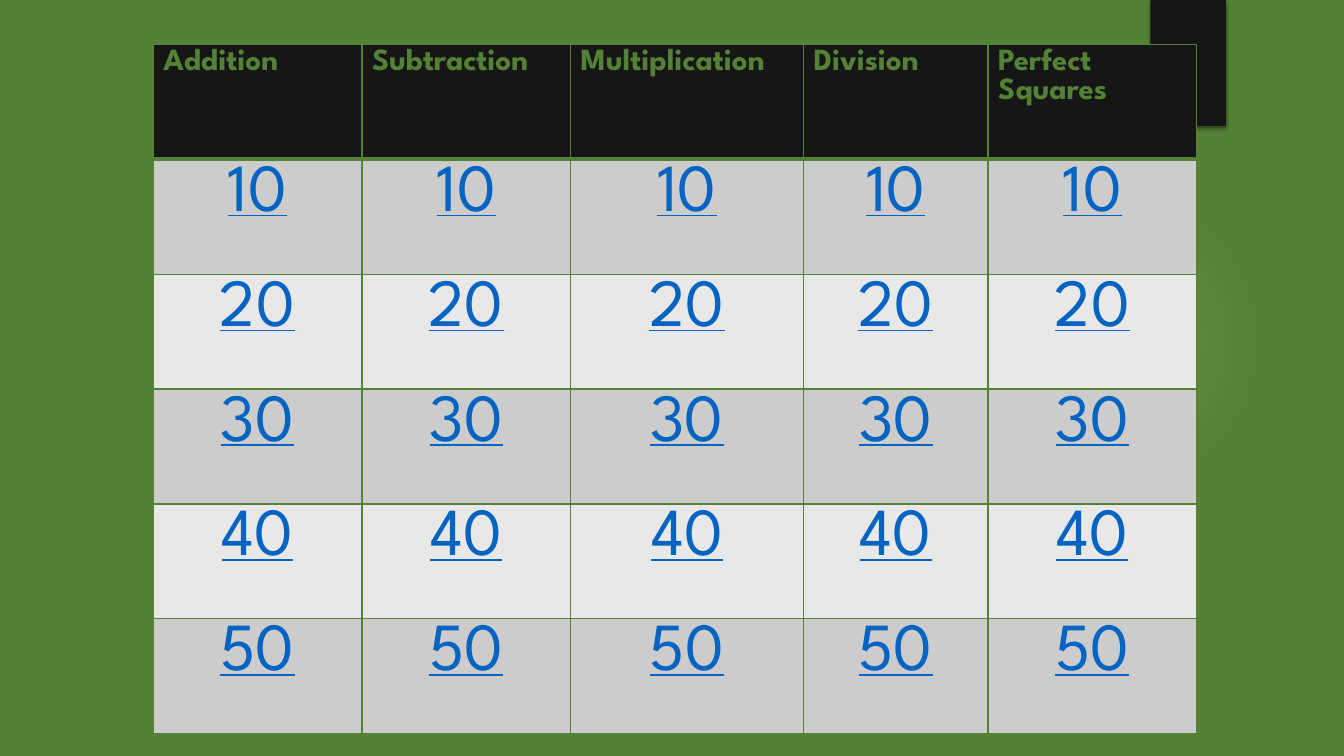
"""Build the arithmetic quiz board slide."""
from dataclasses import dataclass

from pptx import Presentation
from pptx.dml.color import RGBColor
from pptx.enum.shapes import MSO_SHAPE
from pptx.enum.text import PP_ALIGN
from pptx.oxml import parse_xml
from pptx.oxml.ns import nsdecls
from pptx.util import Inches, Pt


@dataclass(frozen=True)
class Theme:
    font: str = "League Spartan"
    green: str = "538135"
    dark: str = "171616"
    bands: tuple = ("CCCCCC", "E8E8E8")
    link: str = "0563C1"
    glow: str = "FFFFFF"
    shadow: str = "000000"
    heading_size: int = 22
    points_size: int = 48
    grid_width: int = 1
    header_rule: int = 3


TOPICS = ["Addition", "Subtraction", "Multiplication", "Division", "Perfect Squares"]
POINTS = [10, 20, 30, 40, 50]
COLUMN_WIDTHS = [2.07, 2.07, 2.31, 1.83, 2.07]
ROW_HEIGHT = 1.14


def write_text(frame, text, font, size, color, bold=False, underline=False,
               align=PP_ALIGN.LEFT):
    para = frame.paragraphs[0]
    para.alignment = align
    span = para.add_run()
    span.text = text
    span.font.name = font
    span.font.size = Pt(size)
    span.font.bold = bold
    span.font.underline = underline
    span.font.color.rgb = RGBColor.from_string(color)


class Board:
    def __init__(self, page, theme):
        self.page = page
        self.theme = theme

    def background(self):
        fill = self.page.background.fill
        fill.solid()
        fill.fore_color.rgb = RGBColor.from_string(self.theme.green)

    def shape(self, kind, left, top, width, height, color):
        box = self.page.shapes.add_shape(
            kind, Inches(left), Inches(top), Inches(width), Inches(height))
        box.shadow.inherit = False
        box.fill.solid()
        box.fill.fore_color.rgb = RGBColor.from_string(color)
        box.line.fill.background()
        return box

    def glow(self, left, top, size):
        box = self.shape(MSO_SHAPE.OVAL, left, top, size, size, self.theme.glow)
        stops = "".join(
            f'<a:gs pos="{place * 1000}"><a:srgbClr val="{self.theme.glow}">'
            f'<a:alpha val="{alpha * 1000}"/></a:srgbClr></a:gs>'
            for place, alpha in [(0, 7), (36, 6), (69, 0)])
        gradient = parse_xml(
            f'<a:gradFill {nsdecls("a")} rotWithShape="1"><a:gsLst>{stops}</a:gsLst>'
            '<a:path path="circle"><a:fillToRect l="50000" t="50000" r="50000" b="50000"/>'
            '</a:path></a:gradFill>')
        properties = box.element.spPr
        properties.replace(properties.find("{*}solidFill"), gradient)

    def tab(self, left, top, width, height):
        box = self.shape(MSO_SHAPE.RECTANGLE, left, top, width, height, self.theme.dark)
        box.element.spPr.find("{*}effectLst").append(parse_xml(
            f'<a:outerShdw {nsdecls("a")} blurRad="{Pt(3)}" dist="{Pt(2)}" dir="5400000">'
            f'<a:srgbClr val="{self.theme.shadow}"><a:alpha val="45000"/></a:srgbClr>'
            '</a:outerShdw>'))

    def cell(self, cell, color, top_rule, bottom_rule):
        grid = self.theme.grid_width
        rules = {"L": grid, "R": grid, "T": top_rule, "B": bottom_rule}
        for side, width in rules.items():
            cell._tc.get_or_add_tcPr().append(parse_xml(
                f'<a:ln{side} {nsdecls("a")} w="{Pt(width)}"><a:solidFill>'
                f'<a:srgbClr val="{self.theme.green}"/></a:solidFill></a:ln{side}>'))
        cell.fill.solid()
        cell.fill.fore_color.rgb = RGBColor.from_string(color)

    def table(self, left, top):
        theme = self.theme
        row_count = len(POINTS) + 1
        table = self.page.shapes.add_table(
            row_count, len(TOPICS), Inches(left), Inches(top),
            Inches(sum(COLUMN_WIDTHS)), Inches(ROW_HEIGHT * row_count)).table
        for column, width in zip(table.columns, COLUMN_WIDTHS):
            column.width = Inches(width)
        for row in table.rows:
            row.height = Inches(ROW_HEIGHT)
        for column, topic in enumerate(TOPICS):
            heading = table.cell(0, column)
            self.cell(heading, theme.dark, theme.grid_width, theme.header_rule)
            write_text(heading.text_frame, topic, theme.font, theme.heading_size,
                       theme.green, bold=True)
            for row, points in enumerate(POINTS, 1):
                cell = table.cell(row, column)
                top_rule = theme.header_rule if row == 1 else theme.grid_width
                self.cell(cell, theme.bands[(row - 1) % 2], top_rule, theme.grid_width)
                write_text(cell.text_frame, str(points), theme.font, theme.points_size,
                           theme.link, underline=True, align=PP_ALIGN.CENTER)


def main():
    deck = Presentation()
    deck.slide_width, deck.slide_height = Inches(13.33), Inches(7.5)
    board = Board(deck.slides.add_slide(deck.slide_layouts[6]), Theme())
    board.background()
    board.glow(9.41, 1.83, 3.08)
    board.tab(11.41, 0, 0.75, 1.25)
    board.table(1.52, 0.44)
    deck.save("out.pptx")


if __name__ == "__main__":
    main()
